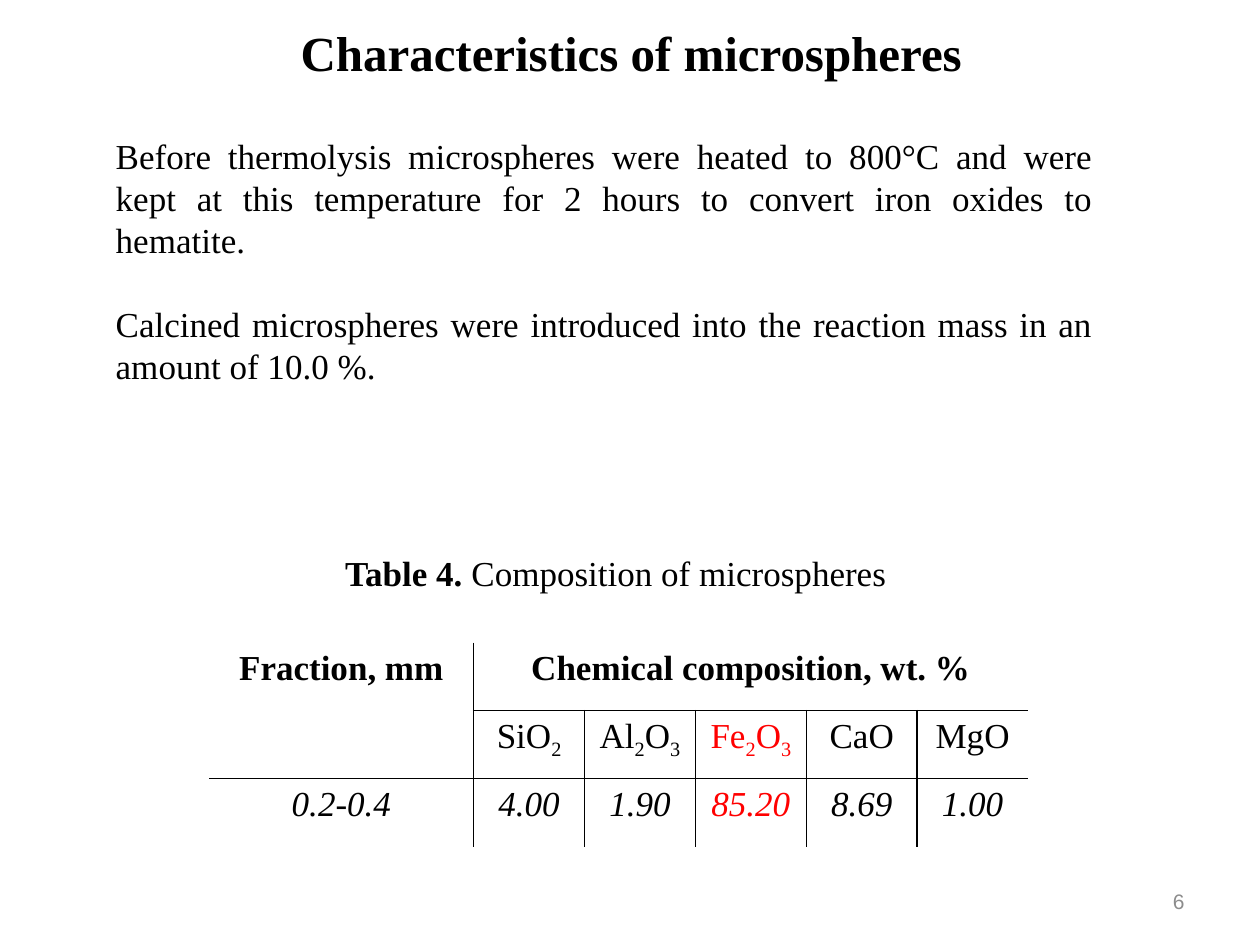
import pptx
import pptx.dml.color
import pptx.enum.text
import pptx.oxml.ns
import pptx.util
from lxml import etree
from pptx.util import Inches

ALIGN = pptx.enum.text.PP_ALIGN
ANCHOR = pptx.enum.text.MSO_ANCHOR
SERIF = "Times New Roman"
BLACK, RED, GREY = "000000", "FF0000", "8C8C8C"
OXIDES = ["SiO2", "Al2O3", "Fe2O3", "CaO", "MgO"]
SHARES = ["4.00", "1.90", "85.20", "8.69", "1.00"]


def color(hex_string):
    return pptx.dml.color.RGBColor.from_string(hex_string)


def add_run(p, text, size=20, font=SERIF, fill=BLACK, bold=False, italic=False):
    r = p.add_run()
    r.text = text
    r.font.size = pptx.util.Pt(size)
    r.font.name = font
    r.font.color.rgb = color(fill)
    r.font.bold = bold
    r.font.italic = italic
    return r


def add_formula(p, formula, fill):
    """Write a chemical formula with its digits as subscripts."""
    for digit in "23":
        formula = formula.replace(digit, f"|{digit}|")
    for part in filter(None, formula.split("|")):
        r = add_run(p, part, fill=fill)
        if part.isdigit():
            r.font._element.set("baseline", "-25000")


def add_text_frame(slide, box, anchor=ANCHOR.MIDDLE, wrap=True):
    tf = slide.shapes.add_textbox(*map(Inches, box)).text_frame
    tf.word_wrap = wrap
    tf.vertical_anchor = anchor
    return tf


def add_title(slide, box):
    p = add_text_frame(slide, box).paragraphs[0]
    p.alignment = ALIGN.CENTER
    p.line_spacing = 0.9
    add_run(p, "Characteristics of microspheres", size=28, bold=True)


def add_body(slide, box):
    tf = add_text_frame(slide, box)
    first, second = tf.paragraphs[0], tf.add_paragraph()
    add_run(first, "Before thermolysis microspheres were heated to 800°C and were kept "
                   "at this temperature for 2 hours to convert iron oxides to hematite.")
    add_run(second, "Calcined microspheres were introduced into the reaction mass "
                    "in an amount of 10.0 %.")
    for p in (first, second):
        p.alignment = ALIGN.JUSTIFY
        p.line_spacing = pptx.util.Pt(24)
    second.space_before = pptx.util.Pt(24)


def add_caption(slide, box):
    p = add_text_frame(slide, box, anchor=ANCHOR.TOP, wrap=False).paragraphs[0]
    add_run(p, "Table 4. ", bold=True)
    add_run(p, "Composition of microspheres")


def add_page_number(slide, box):
    p = add_text_frame(slide, box).paragraphs[0]
    p.alignment = ALIGN.RIGHT
    add_run(p, "6", size=12, font="Arial", fill=GREY)


def set_borders(cell, ruled_sides):
    """Draw the sides named in ruled_sides and clear the others."""
    tcPr = cell._tc.get_or_add_tcPr()
    for side in "LRTB":
        ln = etree.SubElement(tcPr, pptx.oxml.ns.qn(f"a:ln{side}"), w="12700")
        if side in ruled_sides:
            fill = etree.SubElement(ln, pptx.oxml.ns.qn("a:solidFill"))
            etree.SubElement(fill, pptx.oxml.ns.qn("a:srgbClr"), val=BLACK)
        else:
            etree.SubElement(ln, pptx.oxml.ns.qn("a:noFill"))


def ruled_sides(row, col):
    """Rules run between cells only, never around the table or inside a merge."""
    sides = ""
    if col == 1 or (col > 1 and row > 0):
        sides += "L"
    if col == 0 or (col < len(OXIDES) and row > 0):
        sides += "R"
    if row == 2 or (row == 1 and col > 0):
        sides += "T"
    if row < 2:
        sides += "B"
    return sides


def add_composition_table(slide, box):
    rows, cols = 3, 1 + len(OXIDES)
    left, top, width, height = box
    oxide_width = 0.88
    table = slide.shapes.add_table(rows, cols, *map(Inches, box)).table
    table.first_row = table.horz_banding = False
    table.columns[0].width = Inches(width - oxide_width * len(OXIDES))
    for col in range(1, cols):
        table.columns[col].width = Inches(oxide_width)

    for row in range(rows):
        table.rows[row].height = Inches(height / rows)
        for col in range(cols):
            cell = table.cell(row, col)
            set_borders(cell, ruled_sides(row, col))
            cell.fill.background()
            cell.margin_left = cell.margin_right = Inches(0.05)
            cell.text_frame.paragraphs[0].alignment = ALIGN.CENTER
    table.cell(0, 0).merge(table.cell(1, 0))
    table.cell(0, 1).merge(table.cell(0, cols - 1))

    def paragraph(row, col):
        return table.cell(row, col).text_frame.paragraphs[0]

    add_run(paragraph(0, 0), "Fraction, mm", bold=True)
    add_run(paragraph(0, 1), "Chemical composition, wt. %", bold=True)
    add_run(paragraph(2, 0), "0.2-0.4", italic=True)
    for col, (oxide, share) in enumerate(zip(OXIDES, SHARES), start=1):
        fill = RED if oxide == "Fe2O3" else BLACK
        add_formula(paragraph(1, col), oxide, fill)
        add_run(paragraph(2, col), share, fill=fill, italic=True)


def main():
    prs = pptx.Presentation()
    prs.slide_width, prs.slide_height = Inches(10), Inches(7.5)
    slide = prs.slides.add_slide(prs.slide_layouts[6])
    add_page_number(slide, (7.17, 6.95, 2.33, 0.4))
    add_title(slide, (0.51, 0.13, 9, 0.63))
    add_composition_table(slide, (1.66, 5.1, 6.5, 1.62))
    add_body(slide, (0.82, 1.01, 7.95, 2.12))
    add_caption(slide, (2.64, 4.33, 4.52, 0.44))
    prs.save("out.pptx")


if __name__ == "__main__":
    main()
